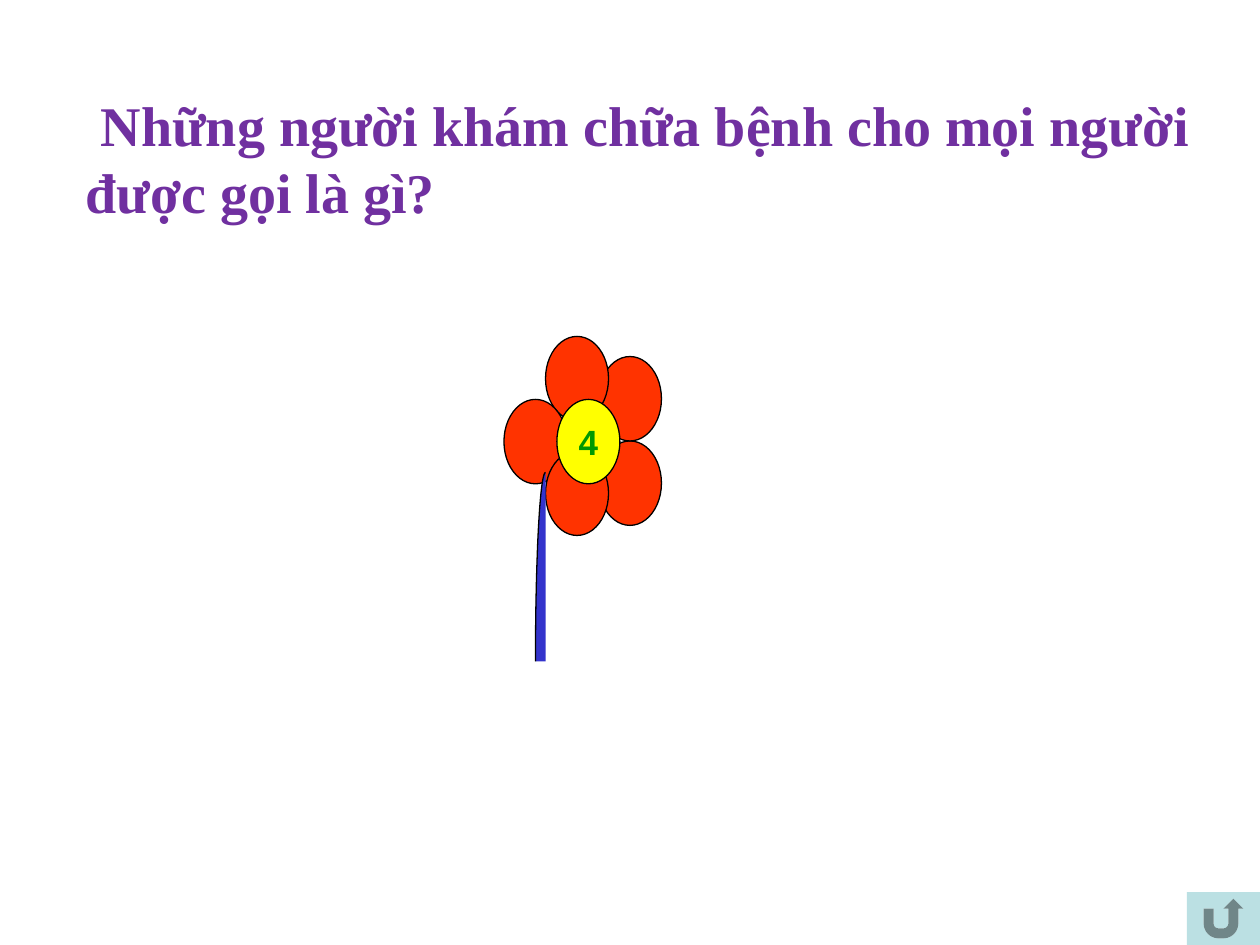
from copy import deepcopy
from dataclasses import dataclass
from math import cos, pi, sin

from pptx import Presentation
from pptx.dml.color import RGBColor
from pptx.enum.shapes import MSO_SHAPE as Shape
from pptx.enum.text import MSO_ANCHOR as Anchor, MSO_AUTO_SIZE as AutoSize, PP_ALIGN as Align
from pptx.util import Inches, Pt


@dataclass(frozen=True)
class Theme:
    question: RGBColor = RGBColor(0x70, 0x30, 0xA0)
    number: RGBColor = RGBColor(0x00, 0x99, 0x00)
    petal: RGBColor = RGBColor(0xFF, 0x33, 0x00)
    center: RGBColor = RGBColor(0xFF, 0xFF, 0x00)
    stem: RGBColor = RGBColor(0x33, 0x33, 0xCC)
    outline: RGBColor = RGBColor(0x00, 0x00, 0x00)
    button: RGBColor = RGBColor(0xBB, 0xE0, 0xE3)
    question_size: Pt = Pt(32)
    number_size: Pt = Pt(20)
    outline_width: Pt = Pt(0.75)


THEME = Theme()
PETAL_SIZE = (0.5, 0.67)
PETAL_OFFSETS = [(0.75, 0.83), (0.75, 0.16), (0.33, 0), (0, 0.5), (0.33, 0.91)]
CENTER_OFFSET = (0.42, 0.5)


def apply(target, **values):
    for name, value in values.items():
        setattr(target, name, value)


def paint(shape, fill, outlined=True):
    shape.shadow.inherit = False
    shape.fill.solid()
    shape.fill.fore_color.rgb = fill
    if outlined:
        shape.line.color.rgb = THEME.outline
        shape.line.width = THEME.outline_width
    else:
        shape.line.fill.background()


def add_question(page, text, left, top, width, height):
    title = page.shapes.title
    apply(title, left=Inches(left), top=Inches(top),
          width=Inches(width), height=Inches(height))
    frame = title.text_frame
    apply(frame, word_wrap=True, auto_size=AutoSize.NONE, vertical_anchor=Anchor.TOP)
    para = frame.paragraphs[0]
    para.alignment = Align.LEFT
    para._p.get_or_add_pPr().set("indent", str(Inches(0.12)))
    span = para.add_run()
    span.text = text
    apply(span.font, name="Times New Roman", size=THEME.question_size, bold=True)
    span.font.color.rgb = THEME.question


def add_stem(shapes, left, top, width, height, steps=24):
    """Draw a filled quarter ellipse whose outline follows only the curve."""
    right, bottom = left + width, top + height
    angles = [pi / 2 * step / steps for step in range(steps + 1)]
    curve = [(Inches(right - width * sin(angle)), Inches(bottom - height * cos(angle)))
             for angle in angles]
    builder = shapes.build_freeform(*curve[0])
    builder.add_line_segments(curve[1:] + [(Inches(right), Inches(bottom))], close=True)
    stem = builder.convert_to_shape()
    paint(stem, THEME.stem)

    area = stem._element.xpath(".//a:path")[0]
    edge = deepcopy(area)
    area.set("stroke", "0")
    edge.set("fill", "none")
    for segment in list(edge)[-2:]:
        edge.remove(segment)
    area.addnext(edge)


def add_flower(page, number, left, top):
    shapes = page.shapes.add_group_shape().shapes

    def add_oval(offset, fill):
        box = (left + offset[0], top + offset[1], *PETAL_SIZE)
        oval = shapes.add_shape(Shape.OVAL, *map(Inches, box))
        paint(oval, fill)
        return oval

    for offset in PETAL_OFFSETS:
        add_oval(offset, THEME.petal)
    frame = add_oval(CENTER_OFFSET, THEME.center).text_frame
    apply(frame, word_wrap=False, vertical_anchor=Anchor.MIDDLE)
    para = frame.paragraphs[0]
    para.alignment = Align.CENTER
    span = para.add_run()
    span.text = number
    apply(span.font, name="Arial", size=THEME.number_size, bold=True)
    span.font.color.rgb = THEME.number
    add_stem(shapes, left + 0.25, top + 1.08, 0.08, 1.5)


def add_return_button(page, left, top, width, height):
    button = page.shapes.add_shape(Shape.ACTION_BUTTON_RETURN,
                                   *map(Inches, (left, top, width, height)))
    paint(button, THEME.button, outlined=False)


def main():
    deck = Presentation()
    apply(deck, slide_width=Inches(10), slide_height=Inches(7.5))
    page = deck.slides.add_slide(deck.slide_layouts.get_by_name("Title Only"))
    add_question(page, "Những người khám chữa bệnh cho mọi người được gọi là gì?",
                 0.58, 0.67, 9.17, 1.18)
    add_flower(page, "4", 4, 2.67)
    add_return_button(page, 9.42, 7.08, 0.58, 0.42)
    deck.save("out.pptx")


if __name__ == "__main__":
    main()
